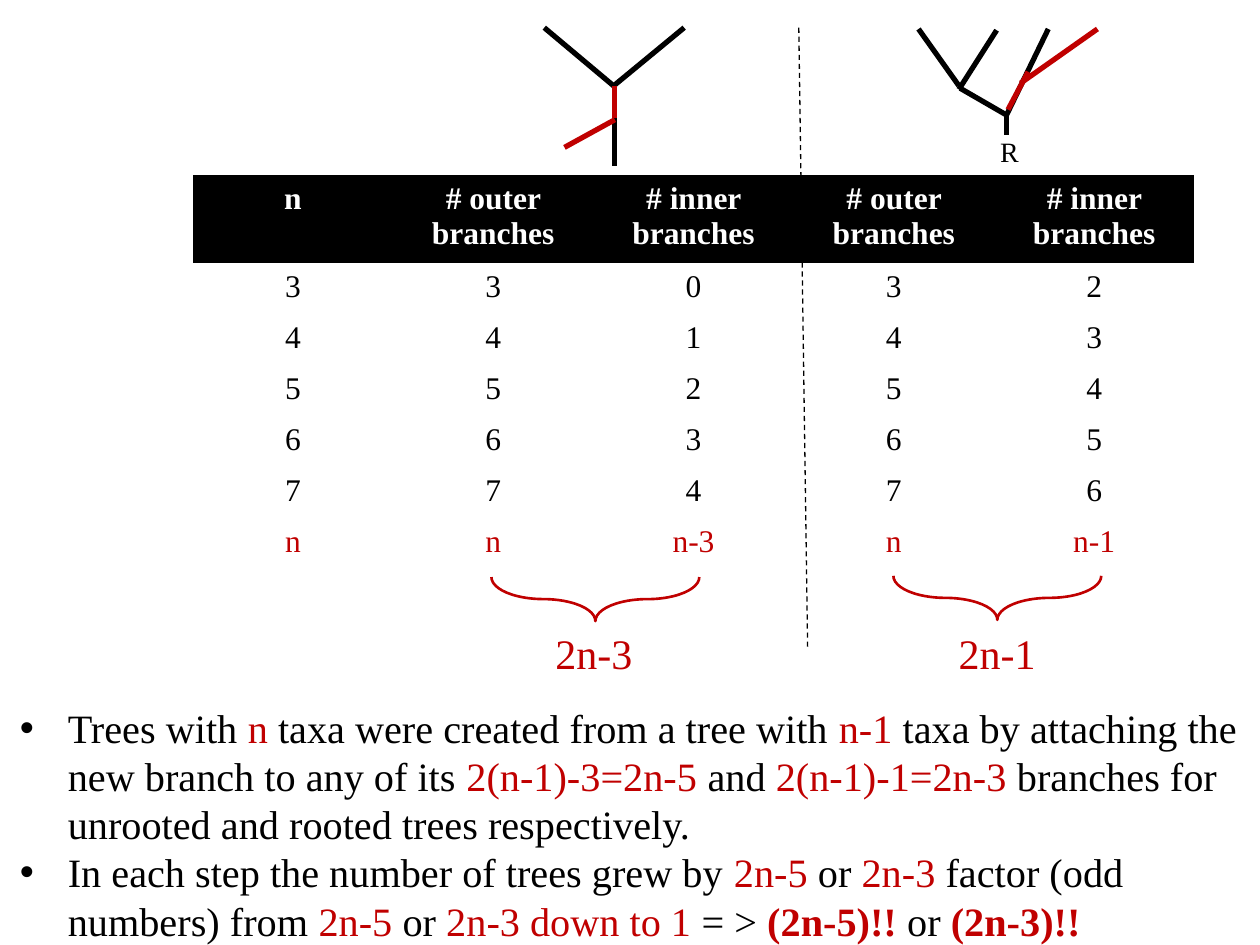
from lxml.etree import SubElement
from pptx import Presentation
from pptx.dml.color import RGBColor
from pptx.enum.dml import MSO_LINE
from pptx.enum.shapes import MSO_CONNECTOR, MSO_SHAPE
from pptx.enum.text import MSO_AUTO_SIZE, PP_ALIGN
from pptx.oxml.ns import qn
from pptx.util import Inches, Pt

FONT = "Times New Roman"
COLORS = {"black": "000000", "white": "FFFFFF", "red": "C00000"}
NO_STYLE_NO_GRID = "{2D5ABB26-0587-4C30-8999-92F81FD0307C}"

SLIDE_WIDTH, SLIDE_HEIGHT = 10, 7.5
TABLE_LEFT, TABLE_TOP = 1.53, 1.39
COLUMN_WIDTH, HEADER_HEIGHT, ROW_HEIGHT = 1.59, 0.7, 0.405

HEADER = ["n"] + ["# outer branches", "# inner branches"] * 2
ROWS = [[n, n, n - 3, n, n - 1] for n in range(3, 8)]
FORMULAS = ["n", "n", "n-3", "n", "n-1"]

# Each branch: start x, start y, end x, end y
TREE_BRANCHES = [
    (4.32, 0.22, 4.88, 0.69), (4.86, 0.69, 5.43, 0.22), (4.88, 0.69, 4.88, 1.32),
    (7.29, 0.23, 7.61, 0.68), (7.61, 0.71, 7.91, 0.24), (8.32, 0.23, 7.99, 0.91),
    (7.62, 0.7, 8, 0.92), (7.99, 0.91, 7.99, 1.07),
]
NEW_BRANCHES = [
    (4.88, 0.95, 4.48, 1.17), (4.88, 0.68, 4.88, 0.94),
    (8.71, 0.23, 8.1, 0.66), (8.16, 0.57, 8, 0.87),
]
DIVIDER = (6.34, 0.22, 6.41, 5.15)

# Each total: text, text left, brace left, brace top
TOTALS = [("2n-3", 4.31, 4.55, 3.93), ("2n-1", 7.51, 7.74, 3.92)]

# Runs alternate between black and red; a "**" prefix makes a run bold
BULLETS = [
    ["Trees with ", "n ", "taxa were created from a tree with ", "n-1 ",
     "taxa by attaching the new branch to any of its ", "2(n-1)-3=2n-5 ", "and ",
     "2(n-1)-1=2n-3 ", "branches for unrooted and rooted trees respectively."],
    ["In each step the number of trees grew by ", "2n-5 ", "or", " 2n-3 ",
     "factor (odd numbers) from ", "2n-5 ", "or", " 2n-3 down to 1", " = > ",
     "**(2n-5)!! ", "or", "** (2n-3)!!"],
]


def rgb(name):
    return RGBColor.from_string(COLORS[name])


def add_run(paragraph, text, size, color, bold=False):
    run = paragraph.add_run()
    run.text = text
    run.font.name = FONT
    run.font.size = Pt(size)
    run.font.bold = bold
    run.font.color.rgb = rgb(color)


def add_line(slide, ends, color, width):
    line = slide.shapes.add_connector(MSO_CONNECTOR.STRAIGHT, *map(Inches, ends))
    line.line.color.rgb = rgb(color)
    line.line.width = Pt(width)
    SubElement(line._element.spPr, qn("a:effectLst"))
    return line


def add_text_frame(slide, left, top, width, height, wrap=True):
    box = slide.shapes.add_textbox(*map(Inches, (left, top, width, height)))
    box.text_frame.word_wrap = wrap
    box.text_frame.auto_size = MSO_AUTO_SIZE.SHAPE_TO_FIT_TEXT
    return box.text_frame


def add_branch_table(slide):
    contents = [HEADER, *ROWS, FORMULAS]
    height = HEADER_HEIGHT + ROW_HEIGHT * (len(contents) - 1)
    frame = slide.shapes.add_table(
        len(contents), len(HEADER), Inches(TABLE_LEFT), Inches(TABLE_TOP),
        Inches(COLUMN_WIDTH * len(HEADER)), Inches(height))
    table = frame.table
    table._tbl.tblPr.find(qn("a:tableStyleId")).text = NO_STYLE_NO_GRID
    table.horz_banding = False
    for row_index, values in enumerate(contents):
        is_header = values is HEADER
        color = "white" if is_header else "red" if values is FORMULAS else "black"
        table.rows[row_index].height = Inches(HEADER_HEIGHT if is_header else ROW_HEIGHT)
        for column_index, value in enumerate(values):
            cell = table.cell(row_index, column_index)
            cell.fill.solid()
            cell.fill.fore_color.rgb = rgb("black" if is_header else "white")
            paragraph = cell.text_frame.paragraphs[0]
            paragraph.alignment = PP_ALIGN.CENTER
            add_run(paragraph, str(value), 18, color, is_header)


def add_total(slide, text, text_left, brace_left, brace_top):
    """Add a downward brace with the sum of its two columns below."""
    brace = slide.shapes.add_shape(
        MSO_SHAPE.RIGHT_BRACE, *map(Inches, (brace_left, brace_top, 0.35, 1.65)))
    brace.rotation = 90
    brace.adjustments[0] = 1.833
    brace.shadow.inherit = False
    brace.fill.background()
    brace.line.color.rgb = rgb("red")
    brace.line.width = Pt(1.5)
    label = add_text_frame(slide, text_left, 4.93, 0.82, 0.51, wrap=False)
    add_run(label.paragraphs[0], text, 24, "red")


def add_bullets(slide):
    text_frame = add_text_frame(slide, 0.06, 5.53, 9.88, 2.04)
    for index, pieces in enumerate(BULLETS):
        paragraph = text_frame.add_paragraph() if index else text_frame.paragraphs[0]
        properties = paragraph._p.get_or_add_pPr()
        properties.set("marL", str(Inches(0.38)))
        properties.set("indent", str(-Inches(0.38)))
        SubElement(properties, qn("a:buFont"), typeface="Arial")
        SubElement(properties, qn("a:buChar"), char="•")
        for position, piece in enumerate(pieces):
            add_run(paragraph, piece.removeprefix("**"), 23,
                    "red" if position % 2 else "black", piece.startswith("**"))


def main():
    presentation = Presentation()
    presentation.slide_width = Inches(SLIDE_WIDTH)
    presentation.slide_height = Inches(SLIDE_HEIGHT)
    slide = presentation.slides.add_slide(presentation.slide_layouts[6])

    for branch in TREE_BRANCHES:
        add_line(slide, branch, "black", 3)
    add_branch_table(slide)
    add_line(slide, DIVIDER, "black", 0.75).line.dash_style = MSO_LINE.DASH
    for branch in NEW_BRANCHES:
        add_line(slide, branch, "red", 3)
    for total in TOTALS:
        add_total(slide, *total)
    add_bullets(slide)
    root_label = add_text_frame(slide, 7.84, 1.02, 0.47, 0.37)
    add_run(root_label.paragraphs[0], "R", 16, "black")

    presentation.save("out.pptx")


if __name__ == "__main__":
    main()
